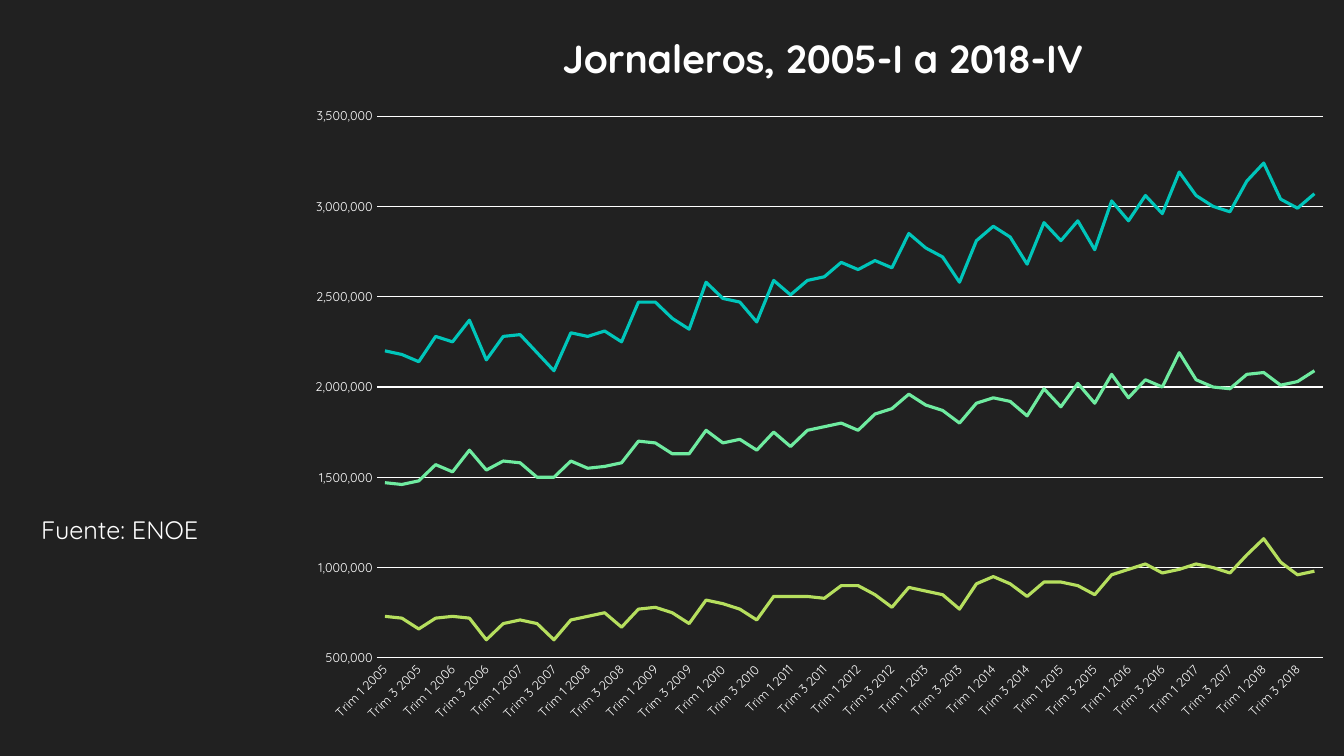
from lxml import etree
from pptx import Presentation
from pptx import util as u
from pptx.chart import data
from pptx.dml.color import RGBColor
from pptx.enum import chart as kinds
from pptx.oxml import ns

WHITE = RGBColor(0xFF, 0xFF, 0xFF)
CHARCOAL = RGBColor(0x21, 0x21, 0x21)
TEAL = RGBColor(0x00, 0xC6, 0xBB)
MINT = RGBColor(0x6F, 0xEB, 0xA0)
LIME = RGBColor(0xB6, 0xDF, 0x5E)
FONT = "Quicksand"

HEADING = "Jornaleros, 2005-I a 2018-IV"
SOURCE = "Fuente: ENOE"
UNIT = 10_000
QUARTERS = [f"Trim {quarter} {year}" for year in range(2005, 2019) for quarter in range(1, 5)]
WORKERS = [
    (TEAL, [
        220, 218, 214, 228, 225, 237, 215, 228, 229, 219, 209, 230, 228, 231,
        225, 247, 247, 238, 232, 258, 249, 247, 236, 259, 251, 259, 261, 269,
        265, 270, 266, 285, 277, 272, 258, 281, 289, 283, 268, 291, 281, 292,
        276, 303, 292, 306, 296, 319, 306, 300, 297, 314, 324, 304, 299, 307]),
    (MINT, [
        147, 146, 148, 157, 153, 165, 154, 159, 158, 150, 150, 159, 155, 156,
        158, 170, 169, 163, 163, 176, 169, 171, 165, 175, 167, 176, 178, 180,
        176, 185, 188, 196, 190, 187, 180, 191, 194, 192, 184, 199, 189, 202,
        191, 207, 194, 204, 200, 219, 204, 200, 199, 207, 208, 201, 203, 209]),
    (LIME, [
        73, 72, 66, 72, 73, 72, 60, 69, 71, 69, 60, 71, 73, 75,
        67, 77, 78, 75, 69, 82, 80, 77, 71, 84, 84, 84, 83, 90,
        90, 85, 78, 89, 87, 85, 77, 91, 95, 91, 84, 92, 92, 90,
        85, 96, 99, 102, 97, 99, 102, 100, 97, 107, 116, 103, 96, 98]),
]
CHART_BOX = (2.9, 0, 10.43, 7.68)
SOURCE_BOX = (0.31, 5.05, 2.42, 0.4)
PLOT_SHARES = {"x": 0.08, "y": 0.15, "w": 0.9, "h": 0.7}
HEADING_SHARES = {"x": 0.25, "y": 0.03}


def style(target, **values):
    for name, value in values.items():
        setattr(target, name, value)


def write(font, size, bold=False):
    style(font, name=FONT, size=u.Pt(size), bold=bold)
    font.color.rgb = WHITE


def draw(line, color, width):
    line.color.rgb = color
    line.width = u.Pt(width)


def element(parent, tag, value):
    return etree.SubElement(parent, ns.qn(f"c:{tag}"), val=str(value))


def place(part, shares, inner=False):
    for old in part.findall(ns.qn("c:layout")):
        part.remove(old)
    layout = etree.Element(ns.qn("c:layout"))
    manual = etree.SubElement(layout, ns.qn("c:manualLayout"))
    if inner:
        element(manual, "layoutTarget", "inner")
    for side in "xy":
        element(manual, f"{side}Mode", "edge")
    for side, share in shares.items():
        element(manual, side, share)
    before = part.find(ns.qn("c:tx"))
    part.insert(0 if before is None else 1, layout)


def add_workers_chart(slide):
    figures = data.CategoryChartData(number_format="#,##0")
    figures.categories = QUARTERS
    for _, values in WORKERS:
        figures.add_series("", [value * UNIT for value in values])
    chart = slide.shapes.add_chart(
        kinds.XL_CHART_TYPE.LINE, *map(u.Inches, CHART_BOX), figures).chart
    chart.has_legend = False
    write(chart.font, 10)

    heading = chart.chart_title
    heading.text_frame.text = HEADING
    write(heading.text_frame.paragraphs[0].runs[0].font, 28, True)
    heading.include_in_layout = False
    place(heading._element, HEADING_SHARES)

    plot = chart.plots[0]
    plot.vary_by_categories = False
    for series, (color, _) in zip(plot.series, WORKERS):
        series.smooth = False
        series.marker.style = kinds.XL_MARKER_STYLE.NONE
        draw(series.format.line, color, 2.25)

    quarters, people = chart.category_axis, chart.value_axis
    for axis in (quarters, people):
        style(axis, major_tick_mark=kinds.XL_TICK_MARK.NONE,
              minor_tick_mark=kinds.XL_TICK_MARK.NONE)
        write(axis.tick_labels.font, 9)
    draw(quarters.format.line, WHITE, 0.75)
    quarters.tick_labels.font._element.getparent().getparent().getparent().find(
        ns.qn("a:bodyPr")).set("rot", "-2700000")
    skip = etree.Element(ns.qn("c:tickLblSkip"), val="2")
    quarters._element.find(ns.qn("c:noMultiLvlLbl")).addprevious(skip)

    style(people, minimum_scale=500_000, maximum_scale=3_500_000,
          major_unit=500_000, has_major_gridlines=True)
    style(people.tick_labels, number_format="#,##0", number_format_is_linked=False)
    people.format.line.fill.background()
    draw(people.major_gridlines.format.line, WHITE, 0.75)
    place(chart._chartSpace.chart.plotArea, PLOT_SHARES, inner=True)


def add_source(slide):
    frame = slide.shapes.add_textbox(*map(u.Inches, SOURCE_BOX)).text_frame
    frame.word_wrap = True
    frame.text = SOURCE
    write(frame.paragraphs[0].runs[0].font, 18)


def main():
    deck = Presentation()
    style(deck, slide_width=u.Inches(13.33), slide_height=u.Inches(7.5))
    slide = deck.slides.add_slide(deck.slide_layouts[6])
    slide.background.fill.solid()
    slide.background.fill.fore_color.rgb = CHARCOAL
    add_workers_chart(slide)
    add_source(slide)
    deck.save("out.pptx")


if __name__ == "__main__":
    main()
